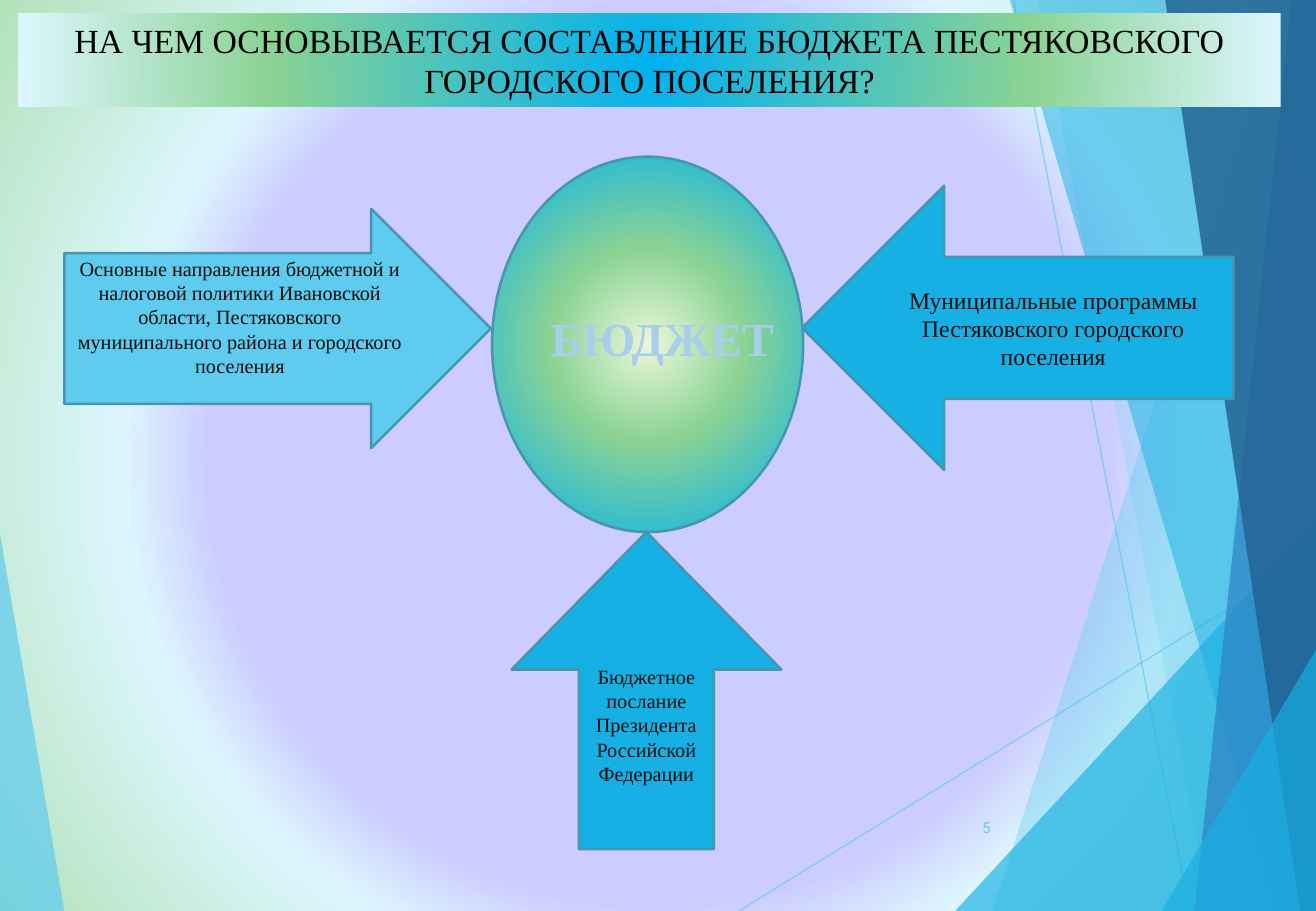
from lxml import etree
from pptx import Presentation
from pptx.dml.color import RGBColor
from pptx.enum.shapes import MSO_CONNECTOR, MSO_SHAPE
from pptx.enum.text import MSO_ANCHOR, PP_ALIGN
from pptx.oxml.ns import qn
from pptx.util import Inches, Pt

SLIDE_W, SLIDE_H = 10.83, 7.5
SERIF = "Times New Roman"

BLACK = RGBColor(0x00, 0x00, 0x00)
INK = RGBColor(0x0D, 0x0D, 0x0D)
SKY = RGBColor(0x5F, 0xCB, 0xEF)
AZURE = RGBColor(0x17, 0xB0, 0xE4)
BLUE = RGBColor(0x2E, 0x83, 0xC3)
NAVY = RGBColor(0x22, 0x62, 0x92)
EDGE = RGBColor(0x46, 0x96, 0xB1)
PALE_BLUE = RGBColor(0xA8, 0xCE, 0xEA)
BRIGHT = RGBColor(0x00, 0xB0, 0xF0)
GREEN = RGBColor(0x8A, 0xD3, 0x94)
MINT = RGBColor(0xB1, 0xE2, 0xB8)
LIME = RGBColor(0xEA, 0xF6, 0xD9)
ICE = RGBColor(0xDD, 0xF6, 0xFE)
LILAC = RGBColor(0xCC, 0xCC, 0xFF)

# Corner points, colour and opacity in percent, from back to front
LEFT_FACET = ([(0, 4.39), (0.53, 7.5), (0, 7.5)], SKY, 70)
RIGHT_FACETS = [
    ([(10.56, 0), (8.17, 7.5), (SLIDE_W, 7.5), (SLIDE_W, 0)], SKY, 36),
    ([(8.54, 0), (9.96, 7.5), (SLIDE_W, 7.5), (SLIDE_W, 0)], SKY, 20),
    ([(7.86, 7.5), (SLIDE_W, 4.29), (SLIDE_W, 7.5)], AZURE, 66),
    ([(8.31, 0), (10.51, 7.5), (SLIDE_W, 7.5), (SLIDE_W, 0)], AZURE, 50),
    ([(10.63, 0), (9.83, 7.5), (SLIDE_W, 7.5), (SLIDE_W, 0)], BLUE, 70),
    ([(9.59, 0), (10.7, 7.5), (SLIDE_W, 7.5), (SLIDE_W, 0)], NAVY, 82),
    ([(9.56, 7.5), (SLIDE_W, 5.35), (SLIDE_W, 7.5)], AZURE, 66),
]
RAYS = [(6.08, 7.5, SLIDE_W, 4.57), (8.34, 0, 9.79, 7.5)]


def set_opacity(shape, percent):
    color = next(shape.element.spPr.iter(qn("a:srgbClr")))
    etree.SubElement(color, qn("a:alpha"), val=str(percent * 1000))


def radial_fill(fill, element, stops):
    """Fill from the centre outwards with (percent, colour) stops."""
    fill.gradient()
    grad = next(element.iter(qn("a:gradFill")))
    for child in list(grad):
        grad.remove(child)
    gs_list = etree.SubElement(grad, qn("a:gsLst"))
    for pos, color in stops:
        gs = etree.SubElement(gs_list, qn("a:gs"), pos=str(pos * 1000))
        etree.SubElement(gs, qn("a:srgbClr"), val=str(color))
    circle = etree.SubElement(grad, qn("a:path"), path="circle")
    etree.SubElement(circle, qn("a:fillToRect"),
                     {side: "50000" for side in "ltrb"})


def add_facet(shapes, points, color, opacity):
    corners = [(Inches(x), Inches(y)) for x, y in points]
    builder = shapes.build_freeform(*corners[0])
    builder.add_line_segments(corners[1:], close=True)
    facet = builder.convert_to_shape()
    facet.shadow.inherit = False
    facet.fill.solid()
    facet.fill.fore_color.rgb = color
    facet.line.fill.background()
    set_opacity(facet, opacity)


def add_ray(shapes, *ends):
    ray = shapes.add_connector(MSO_CONNECTOR.STRAIGHT, *map(Inches, ends))
    ray.line.color.rgb = SKY
    ray.line.width = Pt(0.75)
    set_opacity(ray, 70)
    etree.SubElement(ray.element.spPr, qn("a:effectLst"))


def add_facets(s):
    shapes = s.shapes.add_group_shape().shapes
    add_facet(shapes, *LEFT_FACET)
    for ray in RAYS:
        add_ray(shapes, *ray)
    for facet in RIGHT_FACETS:
        add_facet(shapes, *facet)


def write(shape, text, size, color, font=SERIF, bold=False,
          align=PP_ALIGN.CENTER, anchor=MSO_ANCHOR.MIDDLE):
    tf = shape.text_frame
    tf.text = text
    tf.word_wrap = True
    tf.vertical_anchor = anchor
    p = tf.paragraphs[0]
    p.alignment = align
    r = p.runs[0]
    r.font.name = font
    r.font.size = Pt(size)
    r.font.bold = bold
    r.font.color.rgb = color
    return r


def add_title(s):
    title = s.shapes.title
    title.left, title.top = Inches(0.15), Inches(0.11)
    title.width, title.height = Inches(10.39), Inches(0.77)
    radial_fill(title.fill, title.element,
                [(0, BRIGHT), (60, GREEN), (100, ICE)])
    write(title, "НА ЧЕМ ОСНОВЫВАЕТСЯ СОСТАВЛЕНИЕ БЮДЖЕТА ПЕСТЯКОВСКОГО "
          "ГОРОДСКОГО ПОСЕЛЕНИЯ?", 20, BLACK, anchor=MSO_ANCHOR.TOP)
    s.shapes.element.append(title.element)  # bring in front of the facets


def add_outlined(s, kind, box):
    shape = s.shapes.add_shape(kind, *map(Inches, box))
    shape.shadow.inherit = False
    shape.line.color.rgb = EDGE
    shape.line.width = Pt(1.5)
    return shape


def add_arrow(s, kind, box, color, text, size, adjustments=(0.5, 0.5)):
    arrow = add_outlined(s, kind, box)
    for i, value in enumerate(adjustments):
        arrow.adjustments[i] = value
    arrow.fill.solid()
    arrow.fill.fore_color.rgb = color
    write(arrow, text, size, INK)
    return arrow


def add_budget(s):
    oval = add_outlined(s, MSO_SHAPE.OVAL, (4.05, 1.29, 2.56, 3.09))
    radial_fill(oval.fill, oval.element,
                [(0, LIME), (40, GREEN), (99, BRIGHT), (100, ICE)])


def add_budget_label(s):
    label = s.shapes.add_textbox(*map(Inches, (3.91, 2.5, 3.08, 0.57)))
    r = write(label, "БЮДЖЕТ", 28, PALE_BLUE, bold=True, anchor=MSO_ANCHOR.TOP)
    outline = etree.Element(qn("a:ln"), w=str(Pt(1.75)))
    fill = etree.SubElement(outline, qn("a:solidFill"))
    etree.SubElement(fill, qn("a:srgbClr"), val=str(BLUE))
    r.font.fill  # the outline must stand before the text fill
    r.font.color.rgb = PALE_BLUE
    next(r.font.fill and label.element.iter(qn("a:rPr"))).insert(0, outline)


def main():
    prs = Presentation()
    prs.slide_width, prs.slide_height = Inches(SLIDE_W), Inches(SLIDE_H)
    s = prs.slides.add_slide(prs.slide_layouts[5])
    radial_fill(s.background.fill, s.element,
                [(56, LILAC), (67, ICE), (100, MINT)])
    add_facets(s)
    add_title(s)
    add_budget(s)
    add_arrow(s, MSO_SHAPE.LEFT_ARROW, (6.6, 1.53, 3.55, 2.34), AZURE,
              "Муниципальные программы Пестяковского городского поселения", 14)
    add_budget_label(s)
    add_arrow(s, MSO_SHAPE.UP_ARROW, (4.21, 4.38, 2.22, 2.61), AZURE,
              "Бюджетное послание Президента Российской Федерации", 12,
              (0.5, 0.51))
    number = s.shapes.add_textbox(*map(Inches, (7.64, 6.61, 0.61, 0.4)))
    write(number, "5", 9, SKY, font="Roboto", align=PP_ALIGN.RIGHT)
    policy = add_arrow(
        s, MSO_SHAPE.RIGHT_ARROW, (0.53, 1.72, 3.51, 1.97), SKY,
        "Основные направления бюджетной и налоговой политики Ивановской "
        "области, Пестяковского муниципального района и городского поселения",
        12, (0.63, 0.5))
    policy.text_frame.margin_bottom = Inches(0.24)
    prs.save("out.pptx")


if __name__ == "__main__":
    main()
